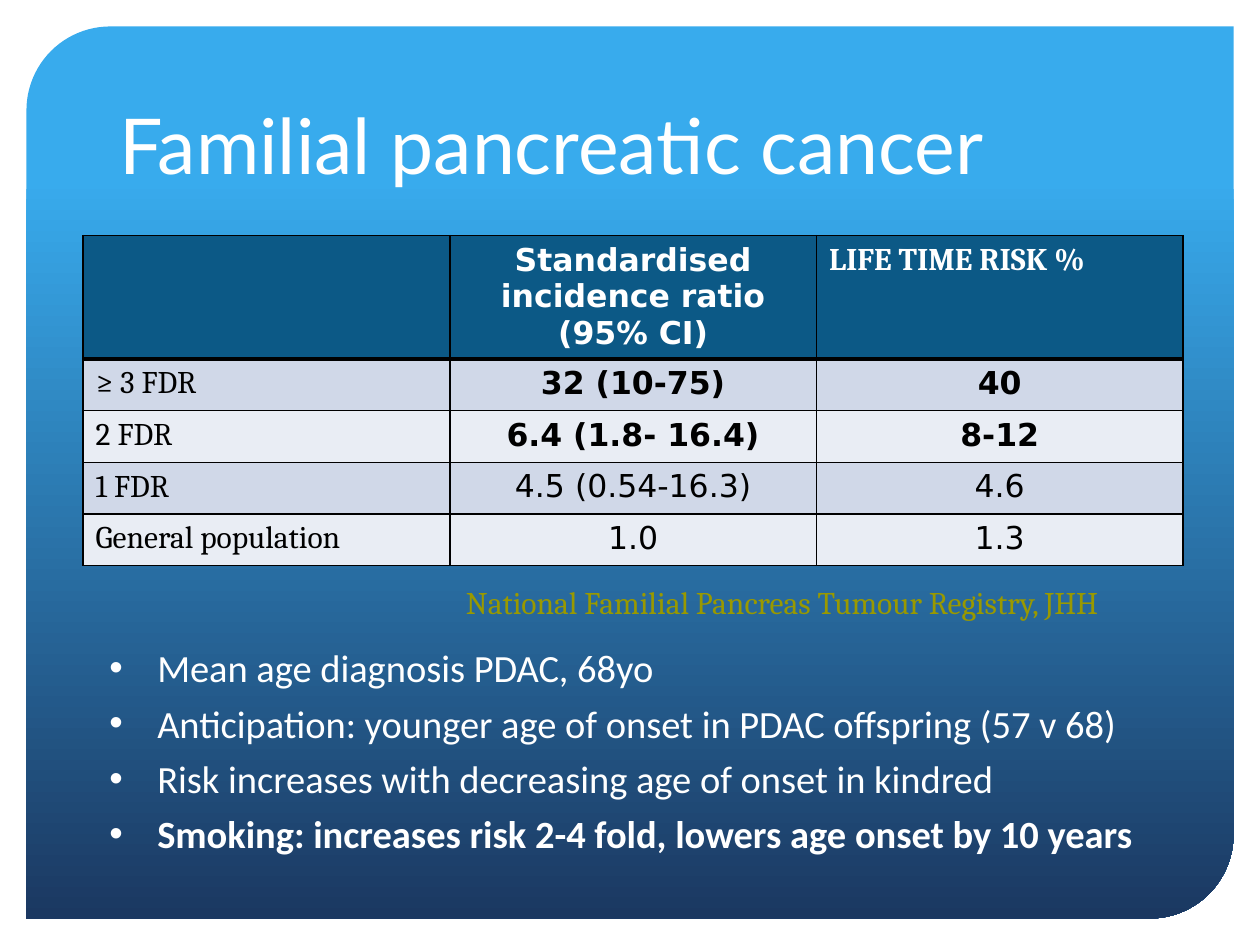
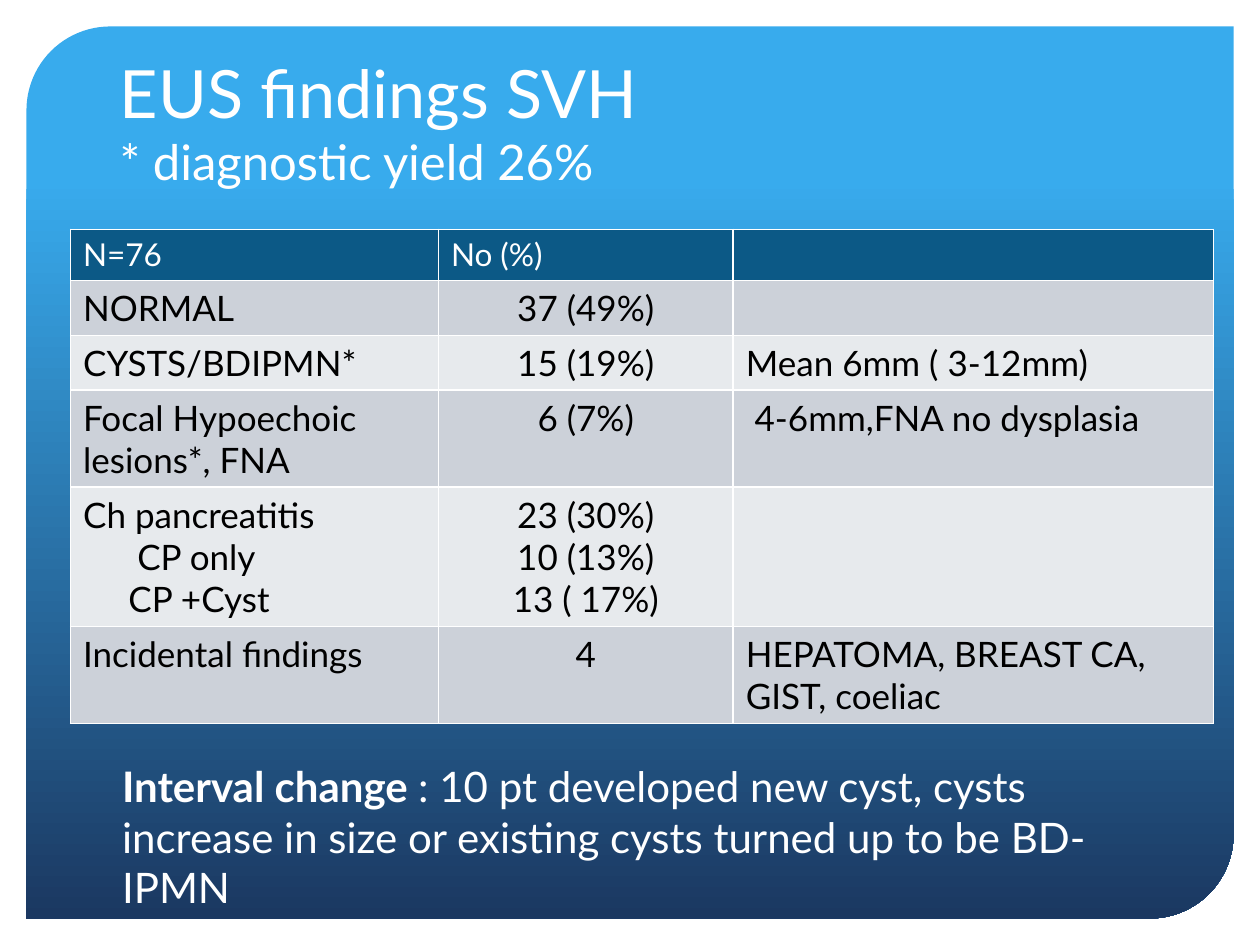
from lxml import etree
from pptx import Presentation
from pptx.dml.color import RGBColor
from pptx.enum.shapes import MSO_SHAPE
from pptx.enum.text import MSO_ANCHOR, MSO_AUTO_SIZE, PP_ALIGN
from pptx.oxml.ns import qn
from pptx.util import Inches, Pt

LEFT, CENTER = PP_ALIGN.LEFT, PP_ALIGN.CENTER
WHITE = RGBColor(0xFF, 0xFF, 0xFF)
BLACK = RGBColor(0, 0, 0)
SKY = RGBColor(0x38, 0xAB, 0xED)
NAVY = RGBColor(0x1B, 0x38, 0x61)
HEADER = RGBColor(0x0C, 0x59, 0x86)
OLIVE = RGBColor(0x99, 0x99, 0x00)
RISK_BANDS = (RGBColor(0xD0, 0xD8, 0xE8), RGBColor(0xE9, 0xED, 0xF4))
EUS_BANDS = (RGBColor(0xCC, 0xD1, 0xD9), RGBColor(0xE7, 0xEA, 0xED))
LATO, CAMBRIA, DEJAVU, CALIBRI = "Lato", "Cambria", "DejaVu Sans", "Calibri"

SLIDE_W, SLIDE_H = 10, 7.5
MARGIN = 0.21
TITLE_BOX = (0.85, 0.42, 8.29, 1.14)

# Content: titles are (text, size) lines
RISK_TITLE = [("Familial pancreatic cancer", 44)]
RISK_ROWS = [
    ("", "Standardised incidence ratio (95% CI)", "LIFE TIME RISK %"),
    ("≥ 3 FDR", "32 (10-75)", "40"),
    ("2 FDR", "6.4 (1.8- 16.4)", "8-12"),
    ("1 FDR", "4.5 (0.54-16.3)", "4.6"),
    ("General population", "1.0", "1.3"),
]
HIGH_RISK_ROWS = (1, 2)
REGISTRY = "National Familial Pancreas Tumour Registry, JHH"
RISK_POINTS = [
    ("Mean age diagnosis PDAC, 68yo", False),
    ("Anticipation: younger age of onset in PDAC offspring (57 v 68)", False),
    ("Risk increases with decreasing age of onset in kindred", False),
    ("Smoking: increases risk 2-4 fold, lowers age onset by 10 years", True),
]

EUS_TITLE = [("EUS findings SVH", 38), ("* diagnostic yield 26%", 28)]
EUS_ROWS = [
    ("N=76", "No (%)", ""),
    ("NORMAL", "37 (49%)", ""),
    ("CYSTS/BDIPMN*", "15 (19%)", "Mean 6mm ( 3-12mm)"),
    ("Focal Hypoechoic lesions*, FNA", "6 (7%)", "4-6mm,FNA no dysplasia"),
    ("Ch pancreatitis\nCP only\nCP +Cyst", "23 (30%)\n10 (13%)\n13 ( 17%)", ""),
    ("Incidental findings", "4", "HEPATOMA, BREAST CA, GIST, coeliac"),
]
EUS_INDENTS = {"CP only": 0.43, "CP +Cyst": 0.36, "4-6mm,FNA no dysplasia": 0.07}
INTERVAL = [
    ("Interval change ", True),
    (": 10 pt developed new cyst, cysts increase in size or existing cysts "
     "turned up to be BD-IPMN", False),
]


def add_run(paragraph, text, size, font, color, bold=False):
    run = paragraph.add_run()
    run.text = text
    run.font.size, run.font.name, run.font.bold = Pt(size), font, bold
    run.font.color.rgb = color


def set_indent(paragraph, left, first=0):
    props = paragraph._p.get_or_add_pPr()
    props.set("marL", str(Inches(left)))
    props.set("indent", str(Inches(first)))
    return props


def start_slide(prs, title_lines):
    slide = prs.slides.add_slide(prs.slide_layouts[5])
    # Gradient panel behind everything
    panel = slide.shapes.add_shape(
        MSO_SHAPE.ROUND_2_DIAG_RECTANGLE, Inches(MARGIN), Inches(MARGIN),
        Inches(SLIDE_W - 2 * MARGIN), Inches(SLIDE_H - 2 * MARGIN))
    panel.adjustments[0], panel.adjustments[1] = 0.094, 0
    panel.shadow.inherit = False
    panel.line.fill.background()
    panel.fill.gradient()
    panel.fill.gradient_angle = 270
    for stop, (color, position) in zip(panel.fill.gradient_stops,
                                       ((SKY, 0.17), (NAVY, 1))):
        stop.color.rgb, stop.position = color, position
    slide.shapes.element.insert(2, panel.element)
    # Title
    title = slide.shapes.title
    title.left, title.top, title.width, title.height = map(Inches, TITLE_BOX)
    frame = title.text_frame
    frame.auto_size, frame.word_wrap = MSO_AUTO_SIZE.NONE, True
    frame.vertical_anchor = MSO_ANCHOR.BOTTOM
    paragraph = frame.paragraphs[0]
    paragraph.alignment = LEFT
    for i, (text, size) in enumerate(title_lines):
        if i:
            paragraph.add_line_break()
        add_run(paragraph, text, size, LATO, WHITE)
    return slide


def add_text_frame(slide, *box):
    frame = slide.shapes.add_textbox(*map(Inches, box)).text_frame
    frame.word_wrap = True
    return frame


def set_borders(cell, color, widths):
    props = cell._tc.get_or_add_tcPr()
    for side, width in zip("LRTB", widths):
        line = etree.SubElement(props, qn(f"a:ln{side}"), w=str(Pt(width)))
        fill = etree.SubElement(line, qn("a:solidFill"))
        etree.SubElement(fill, qn("a:srgbClr"), val=str(color))


def add_grid(slide, rows, left, top, widths, heights, bands, border, rule, style,
             indents):
    """style(row, column) gives size, font, bold and alignment of a cell."""
    table = slide.shapes.add_table(
        len(rows), len(widths), Inches(left), Inches(top),
        Inches(sum(widths)), Inches(sum(heights))).table
    for column, width in zip(table.columns, widths):
        column.width = Inches(width)
    for r, (row, height) in enumerate(zip(rows, heights)):
        table.rows[r].height = Inches(height)
        for c, text in enumerate(row):
            cell = table.cell(r, c)
            set_borders(cell, border, (1, 1, rule if r == 1 else 1,
                                       rule if r == 0 else 1))
            cell.fill.solid()
            cell.fill.fore_color.rgb = bands[(r - 1) % 2] if r else HEADER
            if not text:
                continue
            size, font, bold, align = style(r, c)
            for i, line in enumerate(text.split("\n")):
                frame = cell.text_frame
                paragraph = frame.add_paragraph() if i else frame.paragraphs[0]
                paragraph.alignment = align
                if line in indents:
                    set_indent(paragraph, indents[line])
                add_run(paragraph, line, size, font, BLACK if r else WHITE, bold)


def risk_style(row, column):
    if column == 0 or (row, column) == (0, 2):
        return 18, CAMBRIA, row == 0, LEFT
    return 18, DEJAVU, row == 0 or row in HIGH_RISK_ROWS, CENTER


def eus_style(row, column):
    return (20 if row else 18), LATO, False, CENTER if row and column == 1 else LEFT


def build_risk_slide(prs):
    slide = start_slide(prs, RISK_TITLE)
    add_grid(slide, RISK_ROWS, 0.66, 1.87, [2.91] * 3, [0.98] + [0.41] * 4,
             RISK_BANDS, BLACK, 3, risk_style, {})
    registry = add_text_frame(slide, 3.6, 4.58, 5.94, 0.4)
    add_run(registry.paragraphs[0], REGISTRY, 18, CAMBRIA, OLIVE)
    # Bulleted points
    points = add_text_frame(slide, 0.27, 4.99, 9.13, 1.87)
    for i, (text, bold) in enumerate(RISK_POINTS):
        paragraph = points.add_paragraph() if i else points.paragraphs[0]
        paragraph.level = 1
        paragraph.line_spacing = 1.2
        props = set_indent(paragraph, 0.88, -0.38)
        etree.SubElement(props, qn("a:buFont"), typeface="Arial")
        etree.SubElement(props, qn("a:buChar"), char="•")
        add_run(paragraph, text, 22, CALIBRI, WHITE, bold)


def build_eus_slide(prs):
    slide = start_slide(prs, EUS_TITLE)
    add_grid(slide, EUS_ROWS, 0.56, 1.82, [2.92, 2.34, 3.81],
             [0.4, 0.43, 0.43, 0.77, 1.1, 0.77], EUS_BANDS, WHITE, 1, eus_style,
             EUS_INDENTS)
    interval = add_text_frame(slide, 0.87, 5.99, 8.28, 1.3)
    for text, bold in INTERVAL:
        add_run(interval.paragraphs[0], text, 24, LATO, WHITE, bold)


def main():
    prs = Presentation()
    prs.slide_width, prs.slide_height = Inches(SLIDE_W), Inches(SLIDE_H)
    build_risk_slide(prs)
    build_eus_slide(prs)
    prs.save("out.pptx")


if __name__ == "__main__":
    main()
